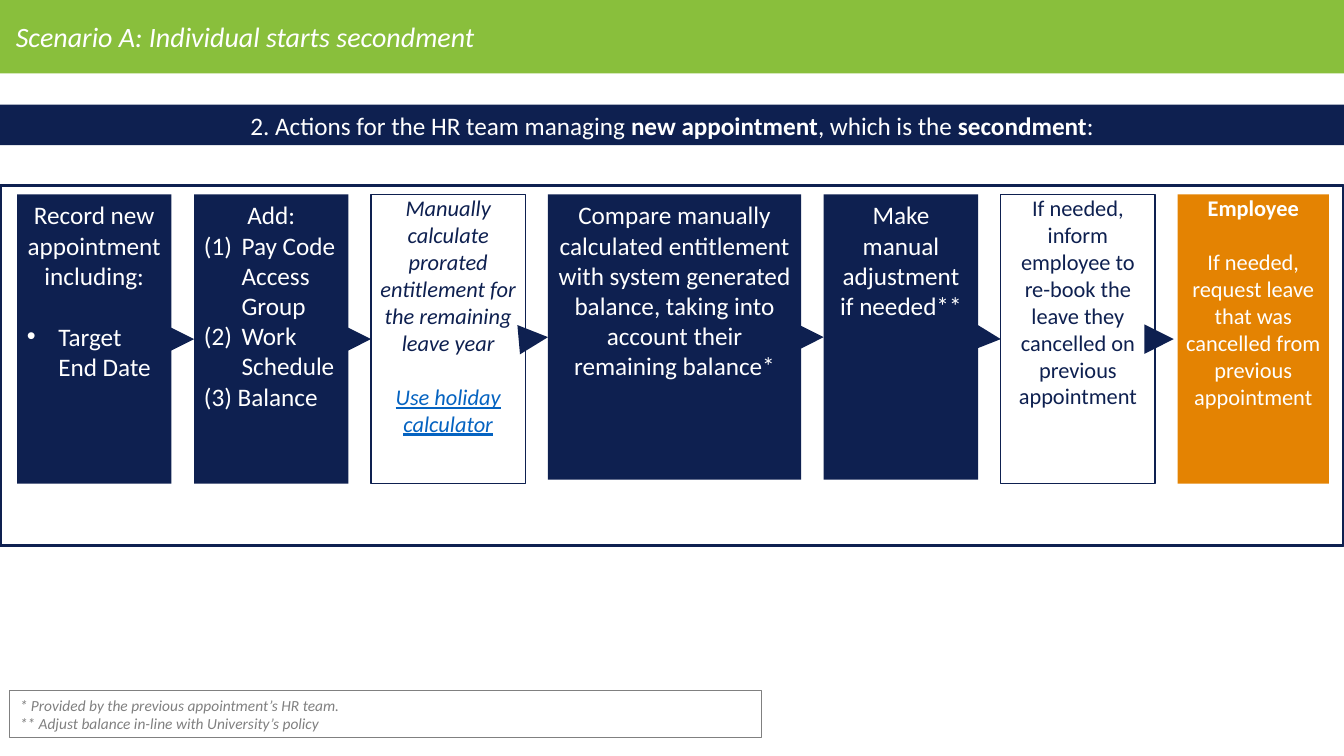
import pptx
import pptx.dml.color
import pptx.enum.shapes
import pptx.enum.text
import pptx.oxml
import pptx.oxml.ns
import pptx.util
from lxml import etree

Cm = pptx.util.Cm
Pt = pptx.util.Pt
RGBColor = pptx.dml.color.RGBColor
ALIGN = pptx.enum.text.PP_ALIGN
ANCHOR = pptx.enum.text.MSO_ANCHOR

WHITE = RGBColor(0xFF, 0xFF, 0xFF)
GREEN = RGBColor(0x89, 0xBF, 0x3C)
NAVY = RGBColor(0x0E, 0x20, 0x50)
ORANGE = RGBColor(0xE4, 0x83, 0x02)
GREY = RGBColor(0x80, 0x80, 0x80)
LINK_BLUE = RGBColor(0x05, 0x63, 0xC1)

SLIDE_WIDTH = 33.87
STEP_TOP = 4.9
STEP_GAP = 0.57
STANDARD_INSETS = (0.25, 0.13, 0.25, 0.13)
SIDE_INSETS = (0.2, 0, 0.2, 0)
NO_INSETS = (0, 0, 0, 0)


def sub_element(parent, tag, **attributes):
    return etree.SubElement(parent, pptx.oxml.ns.qn(tag), **attributes)


def write(box, text, size=18, color=WHITE, bold=False, italic=False, underline=False,
          align=ALIGN.CENTER, before=0, bullet=None, indent=0, same_line=False):
    """Add text to a box; bullet is a character, or "number" for (1), (2)."""
    frame = box.text_frame
    paragraph = frame.paragraphs[-1]
    if paragraph.runs and not same_line:
        paragraph = frame.add_paragraph()
    if not same_line:
        paragraph.alignment = align
        paragraph.space_before = Pt(before)
    if bullet:
        properties = paragraph._p.get_or_add_pPr()
        properties.set("marL", str(Cm(indent)))
        properties.set("indent", str(-Cm(indent)))
        if bullet == "number":
            sub_element(properties, "a:buAutoNum", type="arabicParenBoth")
        else:
            sub_element(properties, "a:buFont", typeface="Arial")
            sub_element(properties, "a:buChar", char=bullet)
    run = paragraph.add_run()
    run.text = text
    font = run.font
    font.name = "Calibri"
    font.size = Pt(size)
    font.bold, font.italic, font.underline = bold, italic, underline
    font.color.rgb = color


class ProcessSlide:
    def __init__(self, presentation):
        self.shapes = presentation.slides.add_slide(presentation.slide_layouts[6]).shapes

    def box(self, left, top, width, height, fill=None, line=None, line_width=1,
            insets=STANDARD_INSETS, anchor=ANCHOR.TOP):
        box = self.shapes.add_shape(pptx.enum.shapes.MSO_SHAPE.RECTANGLE,
                                    Cm(left), Cm(top), Cm(width), Cm(height))
        box.shadow.inherit = False
        if fill is None:
            box.fill.background()
        else:
            box.fill.solid()
            box.fill.fore_color.rgb = fill
        if line is None:
            box.line.fill.background()
        else:
            box.line.color.rgb = line
            box.line.width = Pt(line_width)
        frame = box.text_frame
        frame.word_wrap = True
        frame.vertical_anchor = anchor
        (frame.margin_left, frame.margin_top,
         frame.margin_right, frame.margin_bottom) = map(Cm, insets)
        return box

    def arrow(self, start, end):
        arrow = self.shapes.add_connector(pptx.enum.shapes.MSO_CONNECTOR.STRAIGHT,
                                          *map(Cm, start + end))
        arrow.line.color.rgb = NAVY
        arrow.line.width = Pt(7)
        sub_element(arrow.line._get_or_add_ln(), "a:tailEnd", type="triangle")
        sub_element(arrow._element.spPr, "a:effectLst")

    def steps(self, styles):
        """Lay the steps out left to right with equal gaps and join them with arrows."""
        left, boxes, middles = 0.43, [], []
        for width, height, style in styles:
            boxes.append(self.box(left, STEP_TOP, width, height, **style))
            middles.append((left, left + width, STEP_TOP + height / 2))
            left += width + STEP_GAP
        for (_, right, y), (next_left, _, next_y) in zip(middles, middles[1:]):
            # The arrow to the employee stops just short of the box.
            end = next_left - (0.1 if next_left == middles[-1][0] else 0)
            self.arrow((right, y), (end, next_y))
        return boxes


def main():
    presentation = pptx.Presentation()
    presentation.slide_width = Cm(SLIDE_WIDTH)
    presentation.slide_height = Cm(19.05)
    slide = ProcessSlide(presentation)

    title = slide.box(0, 0, SLIDE_WIDTH, 1.85, fill=GREEN,
                      insets=(0.4, 0, 0, 0), anchor=ANCHOR.MIDDLE)
    write(title, "Scenario A: Individual starts secondment", size=20, italic=True,
          align=ALIGN.LEFT)

    heading = slide.box(0, 2.64, SLIDE_WIDTH, 1.02, fill=NAVY)
    for position, part in enumerate(("2. Actions for the HR team managing ",
                                     "new appointment", ", which is the ",
                                     "secondment", ":")):
        write(heading, part, bold=position % 2 == 1, same_line=position > 0)

    slide.box(0, 4.67, SLIDE_WIDTH, 9.07, line=NAVY, line_width=2.25)

    solid = {"fill": NAVY}
    outlined = {"line": NAVY, "insets": SIDE_INSETS}
    record, add, calculate, compare, adjust, inform, employee = slide.steps([
        (3.89, 7.29, solid),
        (3.89, 7.29, solid),
        (3.89, 7.29, outlined),
        (6.38, 7.19, solid),
        (3.89, 7.19, solid),
        (3.89, 7.29, outlined),
        (3.81, 7.29, {"fill": ORANGE, "insets": NO_INSETS}),
    ])

    write(record, "Record new appointment including:")
    write(record, "Target End Date", align=ALIGN.LEFT, before=22, bullet="•", indent=0.79)

    write(add, "Add:")
    for item in ("Pay Code Access Group", "Work Schedule"):
        write(add, item, align=ALIGN.LEFT, bullet="number", indent=0.95)
    write(add, "(3) Balance", align=ALIGN.LEFT)

    write(calculate, "Manually calculate prorated entitlement for the remaining leave year",
          size=16, color=NAVY, italic=True)
    write(calculate, "Use holiday calculator", size=16, color=LINK_BLUE, italic=True,
          underline=True, before=19.5)

    write(compare, "Compare manually calculated entitlement with system generated balance, "
                   "taking into account their remaining balance*")
    write(adjust, "Make manual adjustment if needed**")
    write(inform, "If needed, inform employee to re-book the leave they cancelled on "
                  "previous appointment", size=16, color=NAVY)

    write(employee, "Employee", size=16, bold=True)
    write(employee, "If needed, request leave that was cancelled from previous appointment",
          size=16, before=19.5)

    footnotes = slide.box(0.25, 17.4, 18.95, 1.19, line=GREY, line_width=0.75)
    for note in ("* Provided by the previous appointment’s HR team.",
                 "** Adjust balance in-line with University’s policy"):
        write(footnotes, note, size=11, color=GREY, italic=True, align=ALIGN.LEFT)

    presentation.save("out.pptx")


if __name__ == "__main__":
    main()
